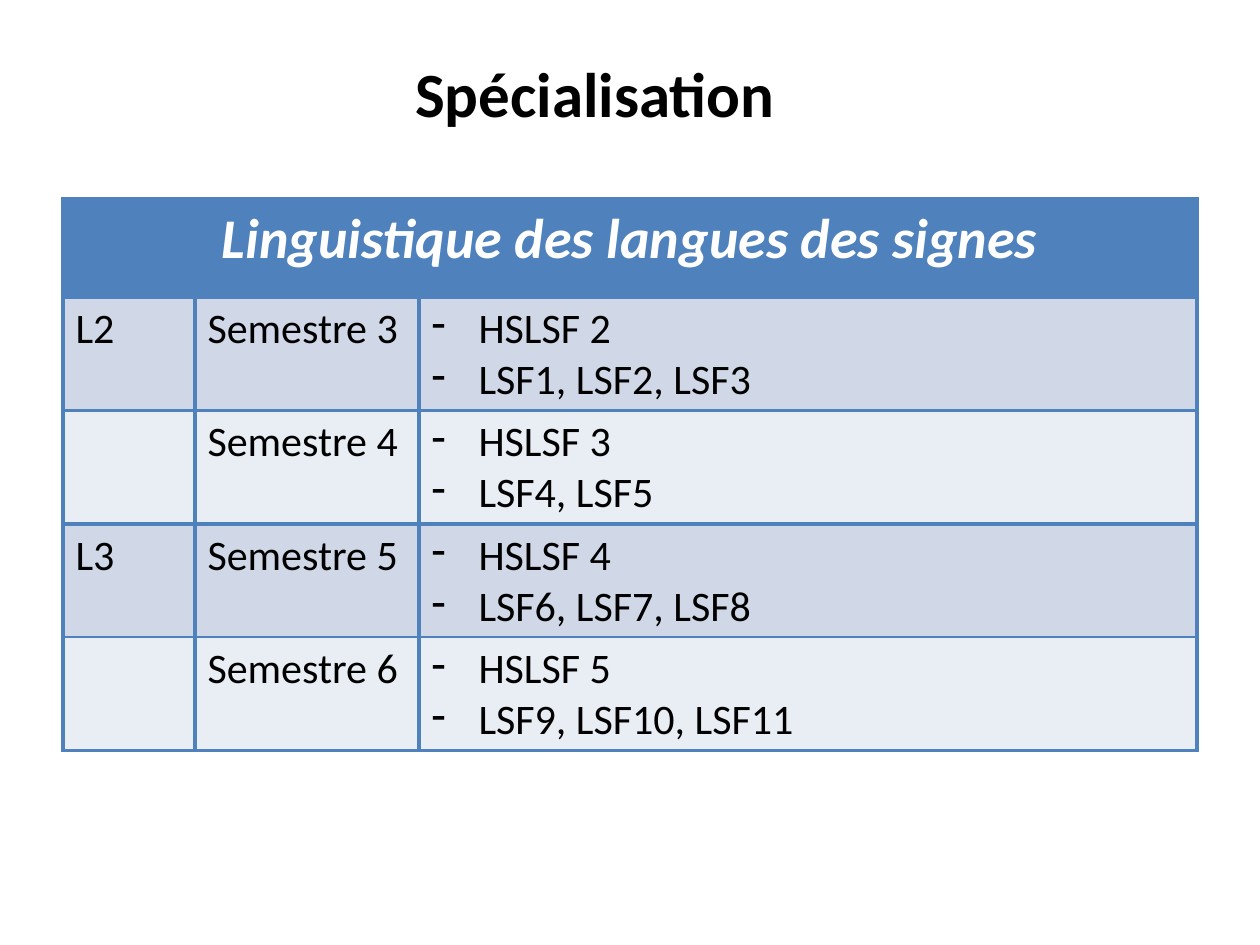
from lxml import etree
from pptx import Presentation
from pptx import util as u
from pptx.dml.color import RGBColor
from pptx.enum import text
from pptx.oxml.ns import qn

SCALE = 914400 / 126
FONT, BLUE, BLACK, WHITE = "Calibri", "4F81BD", "000000", "FFFFFF"
BANDS = ("E9EDF4", "D0D8E8")


def px(n):
    return u.Emu(round(n * SCALE))


def rgb(value):
    return RGBColor.from_string(value)


def write(tf, content, size=24, color=BLACK, bold=False, italic=False, align=None, bullet=None):
    for i, line in enumerate(content.split("\n")):
        p = tf.add_paragraph() if i else tf.paragraphs[0]
        p.alignment = align
        if bullet:
            pPr = p._p.get_or_add_pPr()
            pPr.set("marL", str(px(47)))
            pPr.set("indent", str(px(-47)))
            etree.SubElement(pPr, qn("a:buChar"), char=bullet)
        r = p.add_run()
        r.text = line
        f = r.font
        f.name, f.size, f.bold, f.italic = FONT, u.Pt(size), bold, italic
        f.color.rgb = rgb(color)


class Deck:
    """Holds the style and the current slide."""

    def __init__(self, width, height):
        self.prs = Presentation()
        self.prs.slide_width, self.prs.slide_height = px(width), px(height)
        self.s = self.prs.slides.add_slide(self.prs.slide_layouts[6])

    def title(self, content, x, y, w, h):
        tf = self.s.shapes.add_textbox(px(x), px(y), px(w), px(h)).text_frame
        tf.word_wrap = True
        tf.vertical_anchor = text.MSO_ANCHOR.MIDDLE
        write(tf, content, size=36, bold=True, align=text.PP_ALIGN.CENTER)

    def table(self, x, y, cols, rows):
        tb = self.s.shapes.add_table(len(rows), len(cols), px(x), px(y),
                                     px(sum(cols)), px(sum(rows))).table
        for col, width in zip(tb.columns, cols):
            col.width = px(width)
        for row, height in zip(tb.rows, rows):
            row.height = px(height)
        return tb

    def cell(self, cell, fill, top=2.25, bottom=2.25):
        tcPr = cell._tc.get_or_add_tcPr()
        for side, width in zip("LRTB", (2.25, 2.25, top, bottom)):
            ln = etree.SubElement(tcPr, qn(f"a:ln{side}"), w=str(u.Pt(width)))
            etree.SubElement(etree.SubElement(ln, qn("a:solidFill")), qn("a:srgbClr"), val=BLUE)
        cell.fill.solid()
        cell.fill.fore_color.rgb = rgb(fill)


def main():
    semesters = [
        ("L2", "Semestre 3", "HSLSF 2\nLSF1, LSF2, LSF3"),
        ("", "Semestre 4", "HSLSF 3\nLSF4, LSF5"),
        ("L3", "Semestre 5", "HSLSF 4\nLSF6, LSF7, LSF8"),
        ("", "Semestre 6", "HSLSF 5\nLSF9, LSF10, LSF11"),
    ]
    deck = Deck(1260, 945)
    deck.title("Spécialisation ", 35, 37, 1134, 111)
    tb = deck.table(63, 199, (132, 224, 778), [98] + [108] * len(semesters))

    header = tb.cell(0, 0)
    header.merge(tb.cell(0, 2))
    for c in range(3):
        deck.cell(tb.cell(0, c), BLUE)
    write(header.text_frame, "Linguistique des langues des signes", size=32, color=WHITE,
          bold=True, italic=True, align=text.PP_ALIGN.CENTER)

    for i, values in enumerate(semesters, 1):
        top, bottom = (2.25, 1.5) if i % 2 else (1.5, 2.25)
        for c, value in enumerate(values):
            cell = tb.cell(i, c)
            deck.cell(cell, BANDS[i % 2], top, bottom)
            if value:
                write(cell.text_frame, value, bullet="-" if c == 2 else None)

    deck.prs.save("out.pptx")


if __name__ == "__main__":
    main()
